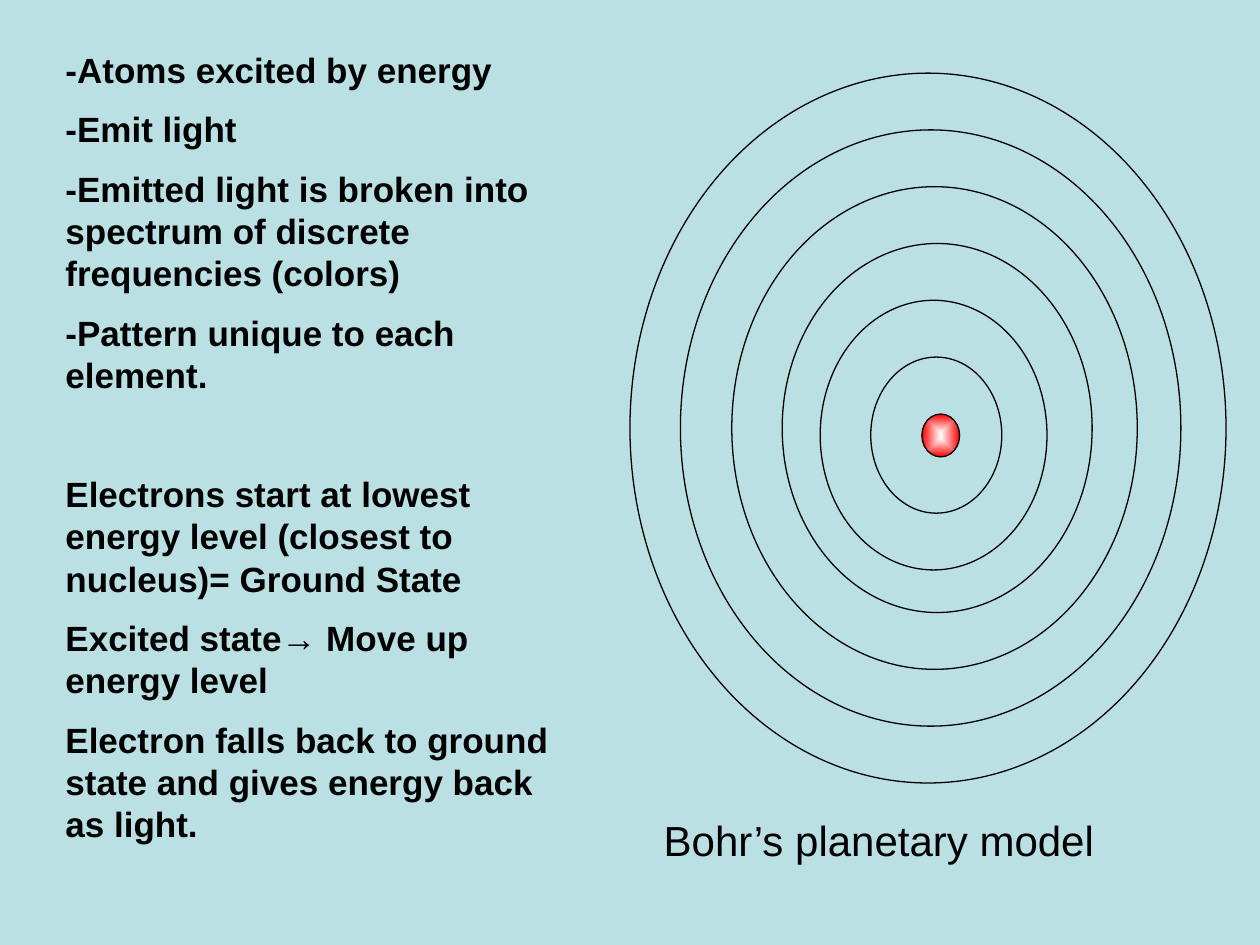
import pptx
import pptx.dml.color
import pptx.enum.shapes
import pptx.enum.text
import pptx.oxml
import pptx.oxml.ns
import pptx.util

Pt = pptx.util.Pt
RGBColor = pptx.dml.color.RGBColor

BACKGROUND = RGBColor(0xBB, 0xE0, 0xE3)
BLACK = RGBColor(0, 0, 0)
WHITE = RGBColor(0xFF, 0xFF, 0xFF)
RED = RGBColor(0xFF, 0, 0)

# Left, width and height of each orbit, outermost first
ORBITS = [
    (360, 340.6, 405.6),
    (388.8, 286, 340.7),
    (418.2, 231.7, 275.8),
    (447, 177.1, 210.9),
    (468.7, 129.6, 154.1),
    (497.6, 74.9, 89.2),
]
ORBIT_TOP, ORBIT_STEP = 41.8, 32.45

EXCITATION = [
    "-Atoms excited by energy",
    "-Emit light",
    "-Emitted light is broken into spectrum of discrete frequencies (colors)",
    "-Pattern unique to each element.",
]
ENERGY_LEVELS = [
    "Electrons start at lowest energy level (closest to nucleus)= Ground State",
    "Excited state→ Move up energy level",
    "Electron falls back to ground state and gives energy back as light.",
]


def add_text(p, text, size, bold=False, before=0, line=None):
    p.alignment = pptx.enum.text.PP_ALIGN.LEFT
    p.space_before = Pt(before)
    if line:
        p.line_spacing = Pt(line)
    r = p.add_run()
    r.text = text
    r.font.name = "Arial"
    r.font.size = Pt(size)
    r.font.bold = bold
    r.font.color.rgb = BLACK


def remove_bullet(p):
    pPr = p._p.get_or_add_pPr()
    pPr.set("marL", "0")
    pPr.set("indent", "0")
    pPr.append(pptx.oxml.parse_xml(
        f'<a:buNone {pptx.oxml.ns.nsdecls("a")}/>'))


def add_ellipse(slide, left, top, width, height):
    sp = slide.shapes.add_shape(
        pptx.enum.shapes.MSO_SHAPE.OVAL,
        Pt(left), Pt(top), Pt(width), Pt(height))
    sp.shadow.inherit = False
    sp.fill.background()
    sp.line.color.rgb = BLACK
    sp.line.width = Pt(0.75)
    return sp


def fill_from_centre(sp, inner, outer):
    """Give the shape a gradient that runs from its centre to its outline."""
    sp.fill.gradient()
    for stop, color in zip(sp.fill.gradient_stops, (inner, outer)):
        stop.color.rgb = color
    lin = sp._element.spPr.find(".//" + pptx.oxml.ns.qn("a:lin"))
    lin.getparent().replace(lin, pptx.oxml.parse_xml(
        f'<a:path {pptx.oxml.ns.nsdecls("a")} path="shape">'
        '<a:fillToRect l="50000" t="50000" r="50000" b="50000"/></a:path>'))


def add_atom(slide):
    for i, (left, width, height) in enumerate(ORBITS):
        add_ellipse(slide, left, ORBIT_TOP + i * ORBIT_STEP, width, height)
    nucleus = add_ellipse(slide, 526.8, 236.6, 21.6, 24.5)
    fill_from_centre(nucleus, WHITE, RED)


def add_caption(slide):
    tf = slide.shapes.add_textbox(Pt(372.2), Pt(462.2), Pt(331.2), Pt(36)).text_frame
    tf.word_wrap = True
    add_text(tf.paragraphs[0], "Bohr’s planetary model", size=24)


def fill_body(body):
    body.left, body.top, body.width, body.height = Pt(30.2), Pt(23.8), Pt(293.8), Pt(479.5)
    tf = body.text_frame
    tf.word_wrap = True
    tf.auto_size = pptx.enum.text.MSO_AUTO_SIZE.NONE
    tf.vertical_anchor = pptx.enum.text.MSO_ANCHOR.TOP
    for i, text in enumerate(EXCITATION + ENERGY_LEVELS):
        p = tf.paragraphs[0] if i == 0 else tf.add_paragraph()
        before = 44 if i == len(EXCITATION) else 10
        add_text(p, text, size=20, bold=True, before=before, line=24.1)
        remove_bullet(p)


def main():
    prs = pptx.Presentation()
    prs.slide_width, prs.slide_height = Pt(720), Pt(540)
    slide = prs.slides.add_slide(prs.slide_layouts[1])
    slide.background.fill.solid()
    slide.background.fill.fore_color.rgb = BACKGROUND
    title = slide.shapes.title._element
    title.getparent().remove(title)
    add_atom(slide)
    add_caption(slide)
    fill_body(slide.placeholders[1])
    prs.save("out.pptx")


if __name__ == "__main__":
    main()
